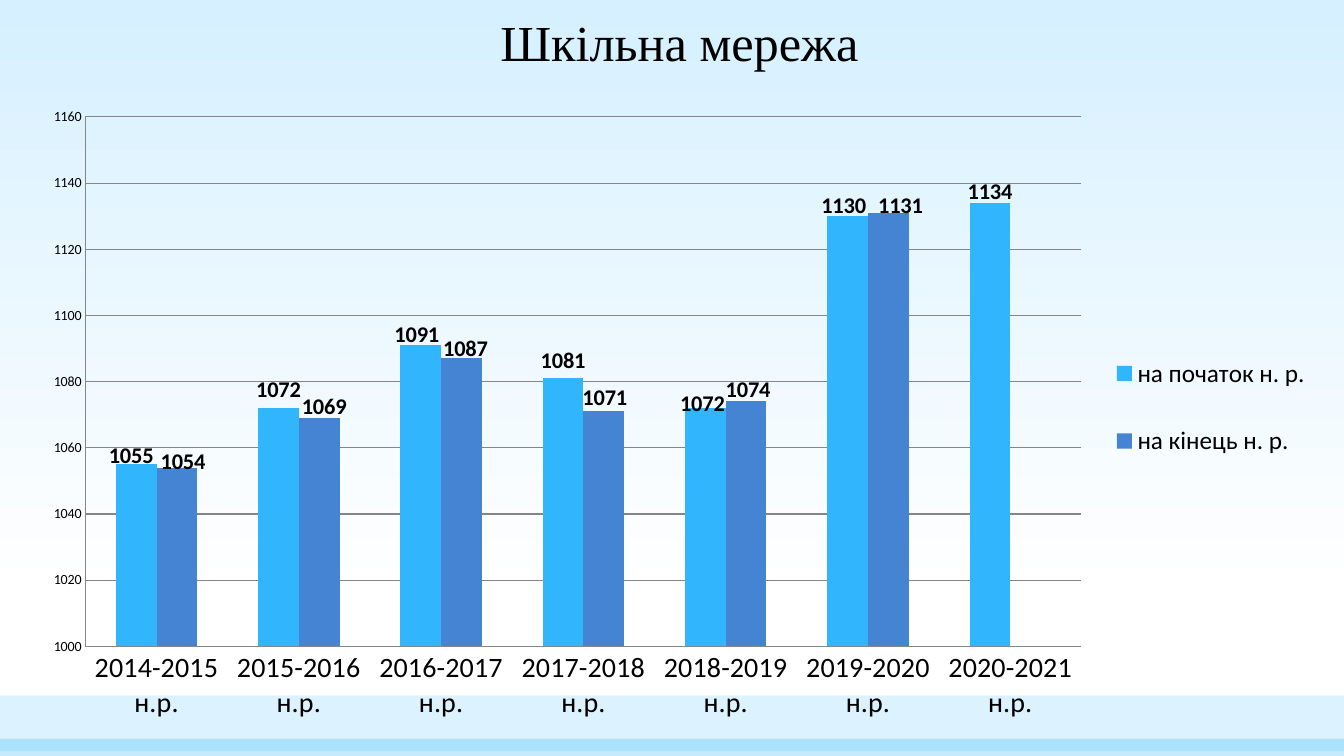
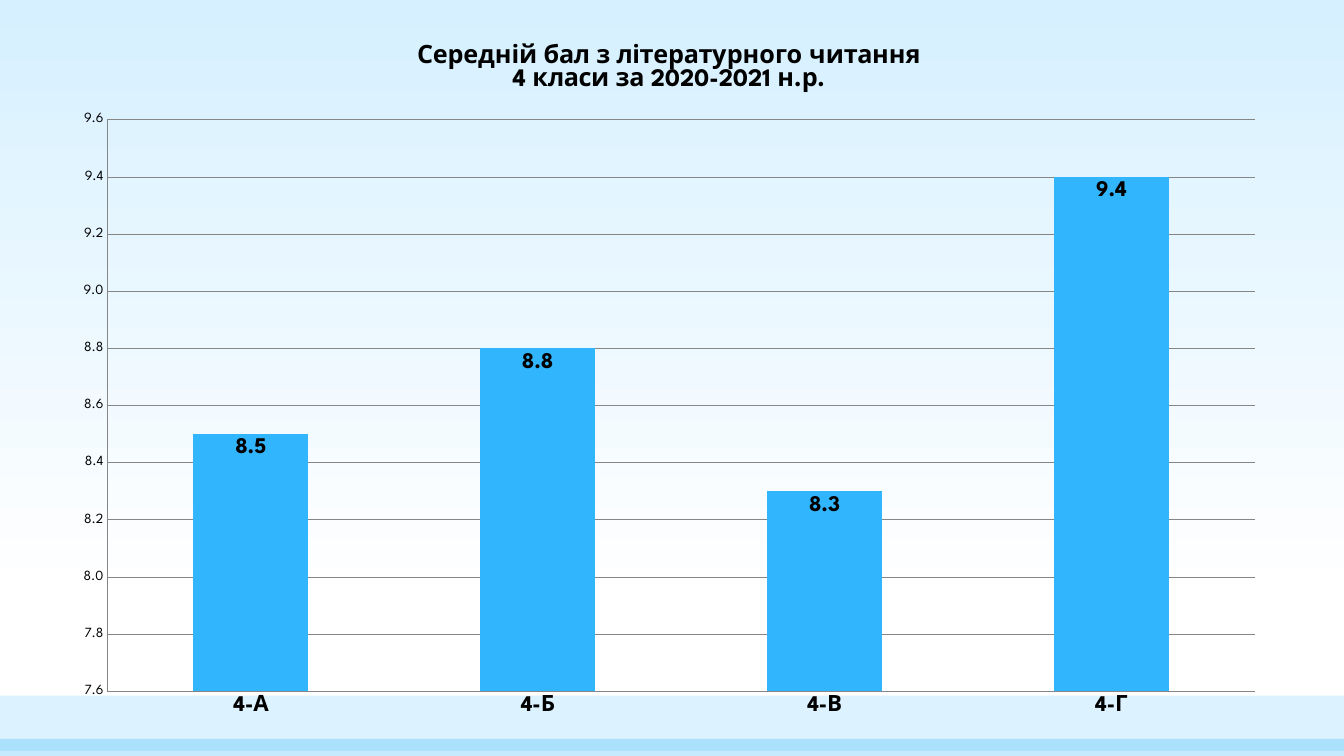
from dataclasses import dataclass

from lxml.etree import SubElement
from pptx import Presentation
from pptx.chart.data import CategoryChartData
from pptx.dml.color import RGBColor
from pptx.enum.chart import XL_CHART_TYPE as ChartType
from pptx.enum.chart import XL_LABEL_POSITION as LabelPosition
from pptx.enum.chart import XL_LEGEND_POSITION as LegendPosition
from pptx.enum.chart import XL_TICK_MARK as TickMark
from pptx.enum.shapes import MSO_SHAPE as Preset
from pptx.enum.text import MSO_ANCHOR as Anchor
from pptx.enum.text import PP_ALIGN as Align
from pptx.oxml.ns import qn
from pptx.util import Inches, Pt

WIDTH, HEIGHT = 13.33, 7.5


@dataclass(frozen=True)
class Theme:
    sky: str = "D6F0FF"
    white: str = "FFFFFF"
    text: str = "000000"
    grid: str = "868686"
    series: tuple = ("31B6FD", "4584D3")
    title_font: str = "Times New Roman"
    title_size: int = 36
    chart_title_size: int = 18
    legend_size: int = 18
    label_size: int = 16
    axis_size: int = 10


def color(value):
    return RGBColor.from_string(value)


def set_layout(parent, index, x, y, w=None, h=None, target=None, edge=True):
    """Place a chart part by hand, in fractions of the chart."""
    for old in parent.findall(qn("c:layout")):
        parent.remove(old)
    layout = SubElement(parent, qn("c:layout"))
    parent.insert(index, layout)
    manual = SubElement(layout, qn("c:manualLayout"))
    modes = (("xMode", "edge"), ("yMode", "edge")) if edge else ()
    settings = (("layoutTarget", target), *modes, ("x", x), ("y", y), ("w", w), ("h", h))
    for name, value in settings:
        if value is not None:
            SubElement(manual, qn(f"c:{name}")).set("val", str(value))


class Deck:
    def __init__(self, theme):
        self.theme = theme
        self.presentation = Presentation()
        self.presentation.slide_width = Inches(WIDTH)
        self.presentation.slide_height = Inches(HEIGHT)
        self.slide = None

    def new_slide(self):
        self.slide = self.presentation.slides.add_slide(self.presentation.slide_layouts[6])
        fill = self.slide.background.fill
        fill.gradient()
        fill.gradient_angle = 270
        stops = ((0, self.theme.sky), (0.79, self.theme.white))
        for stop, (position, value) in zip(fill.gradient_stops, stops):
            stop.position = position
            stop.color.rgb = color(value)
        self.band(6.9, 0.55, 17)
        self.band(7.33, 0.17, 28)

    def band(self, top, height, opacity):
        shape = self.slide.shapes.add_shape(
            Preset.RECTANGLE, 0, Inches(top), Inches(WIDTH), Inches(height))
        shape.shadow.inherit = False
        shape.line.fill.background()
        shape.fill.solid()
        shape.fill.fore_color.rgb = color(self.theme.series[0])
        rgb = shape.fill._xPr.find(f".//{qn('a:srgbClr')}")
        SubElement(rgb, qn("a:alpha")).set("val", str(opacity * 1000))

    def style(self, font, size, name, bold=False):
        font.size, font.name, font.bold = Pt(size), name, bold
        font.color.rgb = color(self.theme.text)

    def title(self, text):
        box = self.slide.shapes.add_textbox(Inches(1.49), 0, Inches(10.5), Inches(0.77))
        frame = box.text_frame
        frame.word_wrap = True
        frame.vertical_anchor = Anchor.BOTTOM
        frame.text = text
        paragraph = frame.paragraphs[0]
        paragraph.alignment = Align.CENTER
        paragraph.line_spacing = 0.9
        self.style(paragraph.runs[0].font, self.theme.title_size, self.theme.title_font)

    def column_chart(self, box, plot_box, categories, series, font, scale,
                     category_size, label_position, number_format="General", bold=False):
        data = CategoryChartData()
        data.categories = categories
        for name, values in series:
            data.add_series(name, values)
        chart = self.slide.shapes.add_chart(
            ChartType.COLUMN_CLUSTERED, *map(Inches, box), data).chart
        chart.has_title = chart.has_legend = False
        self.style(chart.font, self.theme.axis_size, font)
        set_layout(chart._chartSpace.chart.plotArea, 0, *plot_box, target="inner")

        plot = chart.plots[0]
        plot.gap_width, plot.overlap, plot.vary_by_categories = 150, 0, False
        for column, fill_color in zip(plot.series, self.theme.series):
            column.format.fill.solid()
            column.format.fill.fore_color.rgb = color(fill_color)
            labels = column.data_labels
            labels.show_value = True
            labels.position = label_position
            labels.number_format = number_format
            labels.number_format_is_linked = False
            self.style(labels.font, self.theme.label_size, font, bold=True)

        value_axis, category_axis = chart.value_axis, chart.category_axis
        value_axis.minimum_scale, value_axis.maximum_scale, value_axis.major_unit = scale
        value_axis.has_major_gridlines = True
        value_axis.tick_labels.number_format = number_format
        value_axis.tick_labels.number_format_is_linked = False
        self.style(value_axis.tick_labels.font, self.theme.axis_size, font)
        self.style(category_axis.tick_labels.font, category_size, font, bold)
        for axis in (value_axis, category_axis):
            axis.major_tick_mark = axis.minor_tick_mark = TickMark.NONE
        for part in (value_axis, category_axis, value_axis.major_gridlines):
            part.format.line.color.rgb = color(self.theme.grid)
            part.format.line.width = Pt(0.75)
        return chart

    def chart_title(self, chart, text, font):
        chart.has_title = True
        chart.chart_title.include_in_layout = False
        frame = chart.chart_title.text_frame
        frame.text = text
        for paragraph in frame.paragraphs:
            paragraph.alignment = Align.CENTER
            for run in paragraph.runs:
                self.style(run.font, self.theme.chart_title_size, font, bold=True)

    def legend(self, chart, box, font):
        chart.has_legend = True
        chart.legend.position = LegendPosition.RIGHT
        chart.legend.include_in_layout = False
        self.style(chart.legend.font, self.theme.legend_size, font)
        set_layout(chart.legend._element, 1, *box)

    def shift_labels(self, column, offsets, chart_size, font):
        """Move single value labels by offsets given in inches."""
        width, height = chart_size
        for index, (right, down) in offsets.items():
            label = column.points[index].data_label
            label.position = LabelPosition.OUTSIDE_END
            self.style(label.font, self.theme.label_size, font, bold=True)
        for element in column.data_labels._element.findall(qn("c:dLbl")):
            right, down = offsets[int(element.find(qn("c:idx")).get("val"))]
            set_layout(element, 1, round(right / width, 4), round(down / height, 4), edge=False)


def school_network(deck):
    font, box = "Calibri", (0.27, 0.97, 12.83, 6.33)
    deck.new_slide()
    deck.title("Шкільна мережа")
    chart = deck.column_chart(
        box, (0.045, 0.03, 0.77, 0.83),
        [f"{year}-{year + 1} н.р." for year in range(2014, 2021)],
        [("на початок н. р.", (1055, 1072, 1091, 1081, 1072, 1130, 1134)),
         ("на кінець н. р.", (1054, 1069, 1087, 1071, 1074, 1131, None))],
        font, (1000, 1160, 20), 20, LabelPosition.OUTSIDE_END)
    deck.legend(chart, (0.83, 0.35, 0.17, 0.27), font)
    label_offsets = (
        {0: (-0.05, 0.09), 2: (-0.04, 0.07), 4: (-0.03, 0.14), 5: (-0.04, 0.08), 6: (0, 0.07)},
        {0: (0.06, 0.12), 1: (0.05, 0.07), 2: (0.04, 0.08), 3: (0.01, 0.04),
         4: (0.02, 0.06), 5: (0.12, 0.11)},
    )
    for column, offsets in zip(chart.plots[0].series, label_offsets):
        deck.shift_labels(column, offsets, box[2:], font)


def reading_scores(deck):
    font = "League Spartan"
    deck.new_slide()
    chart = deck.column_chart(
        (0.58, 0.21, 12.11, 7), (0.04, 0.14, 0.94, 0.81),
        ["4-А", "4-Б", "4-В", "4-Г"], [("Series 1", (8.5, 8.8, 8.3, 9.4))],
        font, (7.6, 9.6, 0.2), 16, LabelPosition.INSIDE_END, "0.0", bold=True)
    deck.chart_title(chart, "Середній бал з літературного читання\n4 класи за 2020-2021 н.р.", font)


def main():
    deck = Deck(Theme())
    school_network(deck)
    reading_scores(deck)
    deck.presentation.save("out.pptx")


if __name__ == "__main__":
    main()
